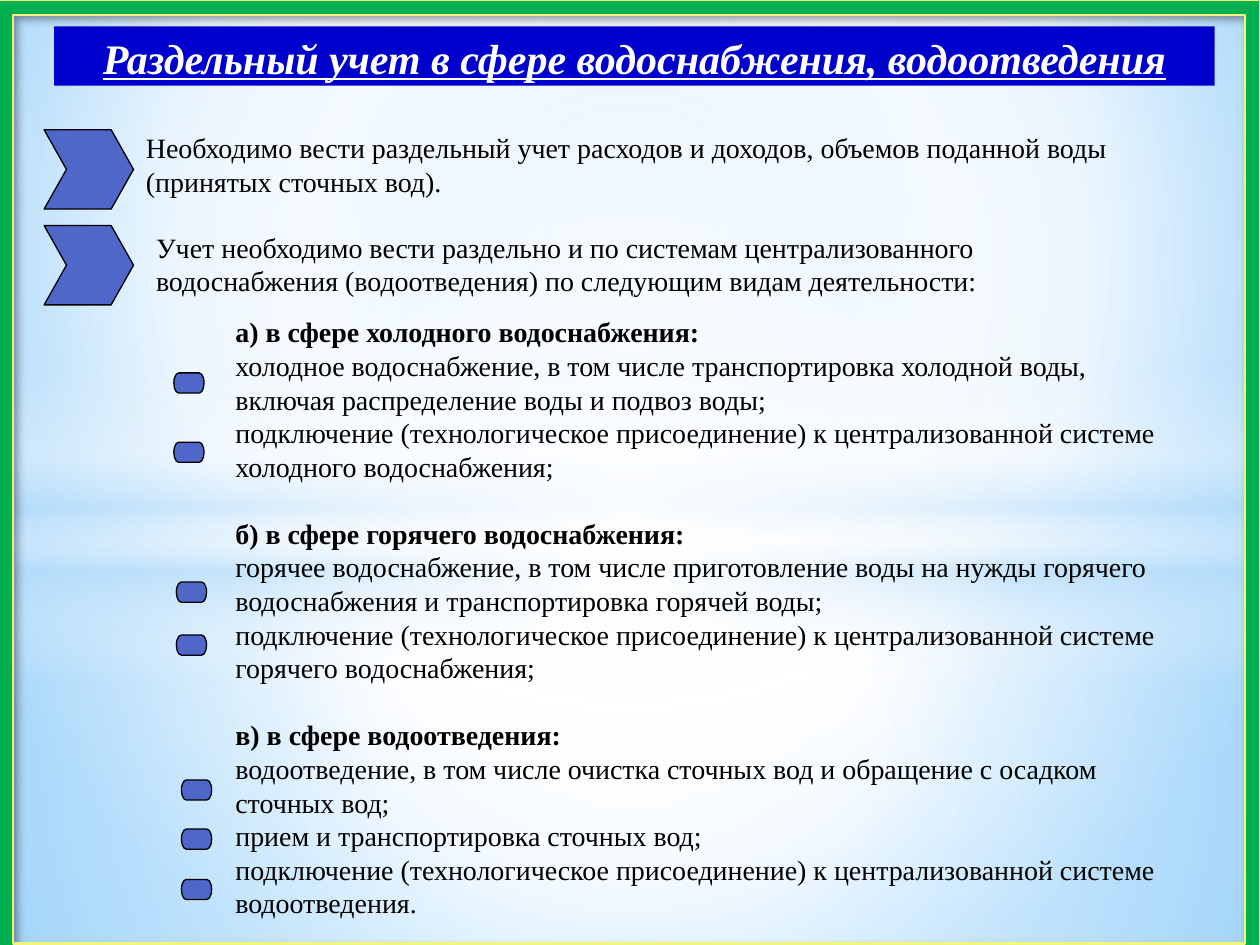
from lxml.etree import SubElement
from pptx import Presentation
from pptx.dml.color import RGBColor
from pptx.enum.shapes import MSO_SHAPE
from pptx.enum.text import MSO_ANCHOR, PP_ALIGN
from pptx.oxml.ns import qn
from pptx.util import Inches, Pt

FONT = "Times New Roman"
BLACK = RGBColor(0x00, 0x00, 0x00)
WHITE = RGBColor(0xFF, 0xFF, 0xFF)
SKY = RGBColor(0xB4, 0xDC, 0xFA)
SKY_LIGHT = RGBColor(0x9E, 0xD5, 0xFF)
SKY_DEEP = RGBColor(0x5B, 0xB9, 0xFF)
GREEN = RGBColor(0x00, 0xB0, 0x50)
YELLOW = RGBColor(0xF3, 0xF6, 0x7C)
NAVY = RGBColor(0x00, 0x00, 0xCC)
BLUE = RGBColor(0x4E, 0x67, 0xC8)
CENTER = (50, 50, 50, 50)


def add_color(parent, color, opacity=100):
    clr = SubElement(parent, qn("a:srgbClr"), val=str(color))
    if opacity < 100:
        SubElement(clr, qn("a:alpha"), val=str(opacity * 1000))


class Deck:
    def __init__(self):
        self.prs = Presentation()
        self.prs.slide_width, self.prs.slide_height = Inches(10), Inches(7.5)
        self.s = self.prs.slides.add_slide(self.prs.slide_layouts[6])

    def gradient(self, props, stops, focus=None):
        """Swap a solid fill for a circular gradient, or a vertical one without focus."""
        solid = props.find(qn("a:solidFill"))
        grad = SubElement(props, qn("a:gradFill"), rotWithShape="1")
        props.replace(solid, grad)
        gs_list = SubElement(grad, qn("a:gsLst"))
        for pos, color, opacity in stops:
            gs = SubElement(gs_list, qn("a:gs"), pos=str(pos * 1000))
            add_color(gs, color, opacity)
        if focus:
            circle = SubElement(grad, qn("a:path"), {"path": "circle"})
            sides = {k: str(v * 1000) for k, v in zip("ltrb", focus)}
            SubElement(circle, qn("a:fillToRect"), sides)
        else:
            SubElement(grad, qn("a:lin"), ang="5400000", scaled="0")

    def background(self, stops, focus):
        self.s.background.fill.solid()
        self.s.background.fill.fore_color.rgb = WHITE
        self.gradient(self.s.element.find(".//" + qn("p:bgPr")), stops, focus)

    def shape(self, kind, x, y, w, h, fill, line=None, width=0.75, adj=None):
        sp = self.s.shapes.add_shape(kind, Inches(x), Inches(y), Inches(w), Inches(h))
        sp.shadow.inherit = False
        sp.fill.solid()
        sp.fill.fore_color.rgb = fill
        if line is None:
            sp.line.fill.background()
        else:
            sp.line.color.rgb = line
            sp.line.width = Pt(width)
        if adj is not None:
            sp.adjustments[0] = adj
        return sp

    def glow(self, kind, x, y, w, h, stops, focus=None):
        sp = self.shape(kind, x, y, w, h, WHITE)
        self.gradient(sp.element.spPr, stops, focus)

    def frame(self, x, y, w, h):
        sp = self.shape(MSO_SHAPE.FRAME, x, y, w, h, GREEN, YELLOW, 1.25, 0.016)
        effects = sp.element.spPr.find(qn("a:effectLst"))
        shadow = SubElement(effects, qn("a:outerShdw"), blurRad=str(Pt(4)),
                            dist=str(Pt(3)), dir="2700000", rotWithShape="0")
        add_color(shadow, BLACK, 40)

    def run(self, p, text, size=16, color=BLACK, bold=False):
        r = p.add_run()
        r.text = text
        r.font.name, r.font.size, r.font.bold = FONT, Pt(size), bold
        r.font.color.rgb = color
        return r

    def banner(self, x, y, w, h, text):
        sp = self.shape(MSO_SHAPE.RECTANGLE, x, y, w, h, NAVY)
        tf = sp.text_frame
        tf.vertical_anchor = MSO_ANCHOR.TOP
        p = tf.paragraphs[0]
        p.alignment = PP_ALIGN.CENTER
        r = self.run(p, text, 24, WHITE, True)
        r.font.italic = r.font.underline = True

    def text(self, x, y, w, h):
        sp = self.s.shapes.add_textbox(Inches(x), Inches(y), Inches(w), Inches(h))
        sp.text_frame.word_wrap = True
        return sp.text_frame

    def sections(self, x, y, w, h, groups):
        tf = self.text(x, y, w, h)
        p = tf.paragraphs[0]
        for i, (heading, items) in enumerate(groups):
            if i:
                p = tf.add_paragraph()
                p.space_before = Pt(19.2)
            self.run(p, heading, bold=True)
            for item in items:
                self.run(tf.add_paragraph(), item)


SECTIONS = [
    ("а) в сфере холодного водоснабжения:", [
        "холодное водоснабжение, в том числе транспортировка холодной воды, "
        "включая распределение воды и подвоз воды;",
        "подключение (технологическое присоединение) к централизованной системе "
        "холодного водоснабжения;"]),
    ("б) в сфере горячего водоснабжения:", [
        "горячее водоснабжение, в том числе приготовление воды на нужды горячего "
        "водоснабжения и транспортировка горячей воды;",
        "подключение (технологическое присоединение) к централизованной системе "
        "горячего водоснабжения;"]),
    ("в) в сфере водоотведения:", [
        "водоотведение, в том числе очистка сточных вод и обращение с осадком "
        "сточных вод;",
        "прием и транспортировка сточных вод;",
        "подключение (технологическое присоединение) к централизованной системе "
        "водоотведения."]),
]
STATEMENTS = [
    (1.06, 0.99, 8.78, "Необходимо вести раздельный учет расходов и доходов, "
     "объемов поданной воды (принятых сточных вод)."),
    (1.14, 1.78, 7.04, "Учет необходимо вести раздельно и по системам "
     "централизованного водоснабжения (водоотведения) по следующим видам "
     "деятельности:"),
]
# Marker column and rows for each section
MARKERS = [(1.38, (2.96, 3.51)), (1.4, (4.62, 5.04)), (1.44, (6.19, 6.58, 6.98))]


def main():
    deck = Deck()

    # Sky backdrop
    deck.background([(0, SKY_LIGHT, 100), (60, WHITE, 100), (100, SKY_DEEP, 100)],
                    (20, 10, 20, 60))
    deck.glow(MSO_SHAPE.RECTANGLE, 0, 4.23, 10, 3.27,
              [(0, WHITE, 92), (37, WHITE, 77), (100, SKY, 80)], CENTER)
    deck.glow(MSO_SHAPE.RECTANGLE, 0, 0, 10, 4.23,
              [(0, WHITE, 90), (48, WHITE, 63), (100, SKY, 80)], CENTER)
    deck.glow(MSO_SHAPE.RECTANGLE, 0, 2.9, 10, 2.5,
              [(0, WHITE, 0), (29, WHITE, 30), (45, SKY, 40),
               (55, WHITE, 26), (65, SKY, 60), (100, WHITE, 0)])
    deck.glow(MSO_SHAPE.OVAL, 0, 1.75, 10, 5.58,
              [(0, WHITE, 100), (54, WHITE, 0)], CENTER)
    deck.frame(-0.02, 0, 10.02, 7.61)

    # Activities by section
    deck.sections(1.77, 2.45, 7.8, 5.18, SECTIONS)

    # Title
    deck.banner(0.43, 0.21, 9.21, 0.47,
                "Раздельный учет в сфере водоснабжения, водоотведения")

    # Statements with chevrons
    for i, (x, y, w, statement) in enumerate(STATEMENTS):
        deck.shape(MSO_SHAPE.CHEVRON, 0.35, 1.03 + 0.76 * i, 0.71, 0.63,
                   BLUE, BLACK, adj=0.282)
        deck.run(deck.text(x, y, w, 0.64).paragraphs[0], statement)

    # Activity markers
    for x, rows in MARKERS:
        for y in rows:
            deck.shape(MSO_SHAPE.FLOWCHART_TERMINATOR, x, y, 0.24, 0.16, BLUE, BLACK)

    deck.prs.save("out.pptx")


if __name__ == "__main__":
    main()
